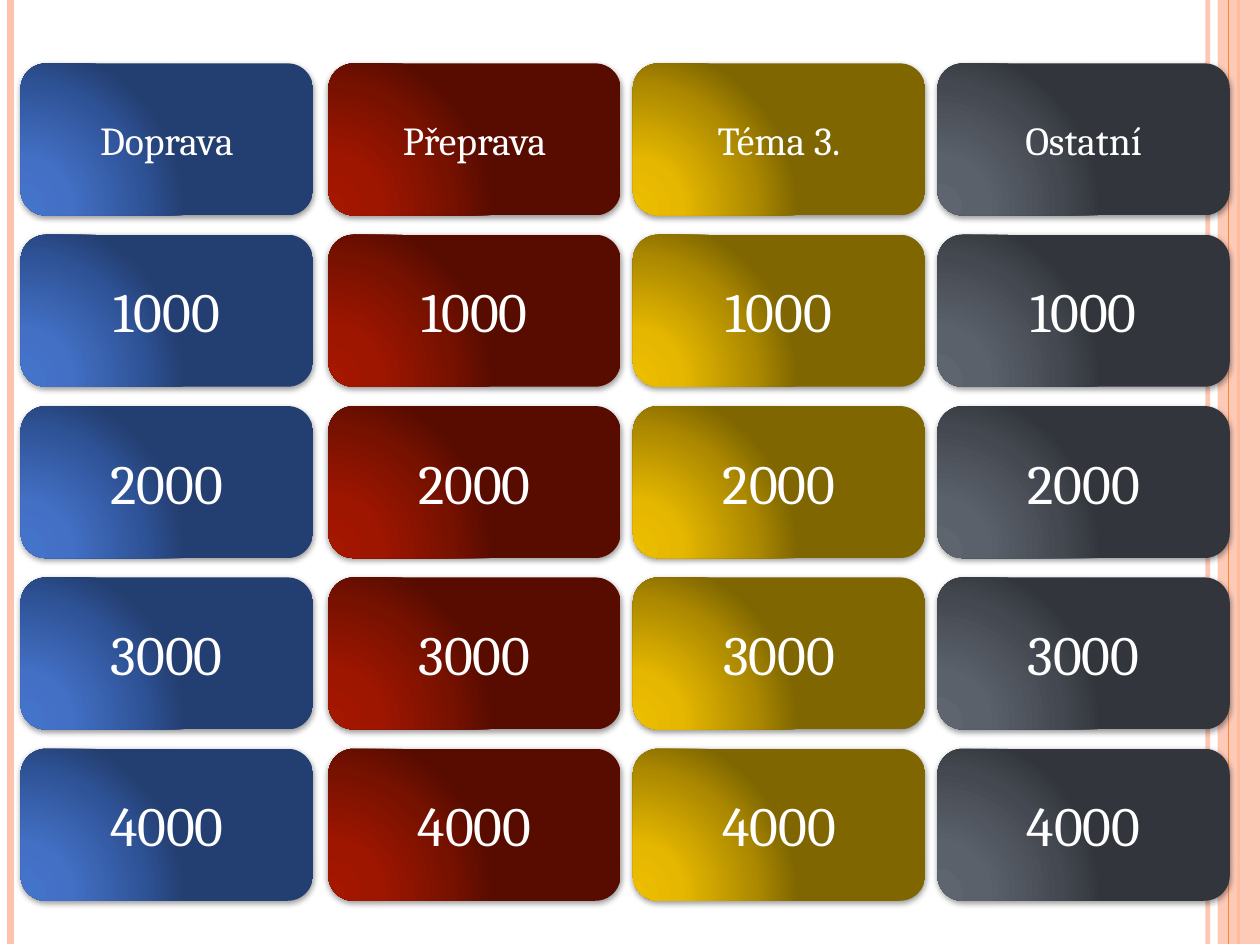
from lxml.etree import SubElement
from pptx import Presentation
from pptx.dml.color import RGBColor
from pptx.enum.shapes import MSO_CONNECTOR, MSO_SHAPE
from pptx.enum.text import MSO_ANCHOR, PP_ALIGN
from pptx.oxml.ns import qn
from pptx.util import Cm, Pt

COLORS = {
    "text": "FFFFFF",
    "shadow": "000000",
    "peach": "FEC3AE",
    "orange": "FE8637",
    "blue": ["4574CC", "4370C5", "2F5397", "233E70"],
    "red": ["A41700", "9F1600", "771100", "580C00"],
    "gold": ["EDBE00", "E5B700", "AC8900", "7F6600"],
    "gray": ["5E656F", "5B616B", "444951", "32363C"],
}
STOPS = [0, 30, 75, 100]
FONT = "Cambria"

SLIDE_WIDTH, SLIDE_HEIGHT = Cm(28.01), Cm(20.99)
CARD_WIDTH, CARD_HEIGHT = Cm(6.5), Cm(3.38)
ROW_PITCH = Cm(3.81)
# Each topic: heading, colour, left edge within the board
TOPICS = [
    ("Doprava", "blue", Cm(0)),
    ("Přeprava", "red", Cm(6.84)),
    ("Téma 3.", "gold", Cm(13.61)),
    ("Ostatní", "gray", Cm(20.38)),
]
POINTS = ["1000", "2000", "3000", "4000"]


def set_opacity(shape, percent):
    for color in shape._element.spPr.iter(qn("a:srgbClr")):
        SubElement(color, qn("a:alpha"), val=str(percent * 1000))


def add_stripe(slide, left, top, height, color, width, opacity=100):
    """Draw a vertical line; width is in points."""
    stripe = slide.shapes.add_connector(
        MSO_CONNECTOR.STRAIGHT, left, top, left, top + height)
    stripe.line.color.rgb = RGBColor.from_string(COLORS[color])
    stripe.line.width = Pt(width)
    if opacity < 100:
        set_opacity(stripe, opacity)
    SubElement(stripe._element.spPr, qn("a:effectLst"))


def add_side_decoration(slide, left, top, width, height):
    right = left + width
    add_stripe(slide, right - Cm(1.16), top, height, "peach", 3, opacity=93)
    add_stripe(slide, left + Cm(0.23), top, height, "peach", 4.5)
    add_stripe(slide, right - Cm(0.48), top, height, "orange", 1.5)

    band_width = Cm(0.94)
    band = slide.shapes.add_shape(
        MSO_SHAPE.RECTANGLE, right - band_width, top, band_width, height)
    band.shadow.inherit = False
    band.fill.solid()
    band.fill.fore_color.rgb = RGBColor.from_string(COLORS["peach"])
    band.line.fill.background()
    set_opacity(band, 87)

    add_stripe(slide, right - Cm(0.7), top, height, "orange", 0.75)


def fill_radial(shape, colors):
    gradient = SubElement(shape._element.spPr, qn("a:gradFill"), rotWithShape="1")
    stops = SubElement(gradient, qn("a:gsLst"))
    for position, color in zip(STOPS, colors):
        stop = SubElement(stops, qn("a:gs"), pos=str(position * 1000))
        SubElement(stop, qn("a:srgbClr"), val=color)
    path = SubElement(gradient, qn("a:path"), path="circle")
    SubElement(path, qn("a:fillToRect"), l="5000", t="100000", r="120000", b="10000")


def add_shadow(shape):
    effects = SubElement(shape._element.spPr, qn("a:effectLst"))
    shadow = SubElement(
        effects, qn("a:outerShdw"), blurRad=str(Pt(4)), dist=str(Pt(1.6)),
        dir="5400000", rotWithShape="0")
    color = SubElement(shadow, qn("a:srgbClr"), val=COLORS["shadow"])
    SubElement(color, qn("a:alpha"), val="42000")


def write_text(shape, text, size, color="text", align=PP_ALIGN.CENTER):
    frame = shape.text_frame
    frame.word_wrap = True
    frame.vertical_anchor = MSO_ANCHOR.MIDDLE
    paragraph = frame.paragraphs[0]
    paragraph.alignment = align
    run = paragraph.add_run()
    run.text = text
    run.font.name = FONT
    run.font.size = Pt(size)
    run.font.color.rgb = RGBColor.from_string(COLORS[color])


def add_card(slide, left, top, text, color, size):
    card = slide.shapes.add_shape(
        MSO_SHAPE.ROUNDED_RECTANGLE, left, top, CARD_WIDTH, CARD_HEIGHT)
    fill_radial(card, COLORS[color])
    card.line.fill.background()
    add_shadow(card)
    write_text(card, text, size=size)


def add_board(slide, left, top):
    for row, points in enumerate([None, *POINTS]):
        for heading, color, offset in TOPICS:
            add_card(slide, left + offset, top + row * ROW_PITCH,
                     points or heading, color, size=35 if points else 25)


def main():
    presentation = Presentation()
    presentation.slide_width = SLIDE_WIDTH
    presentation.slide_height = SLIDE_HEIGHT
    slide = presentation.slides.add_slide(presentation.slide_layouts[6])
    add_side_decoration(slide, 0, 0, SLIDE_WIDTH, SLIDE_HEIGHT)
    add_board(slide, Cm(0.46), Cm(1.41))
    presentation.save("out.pptx")


if __name__ == "__main__":
    main()
